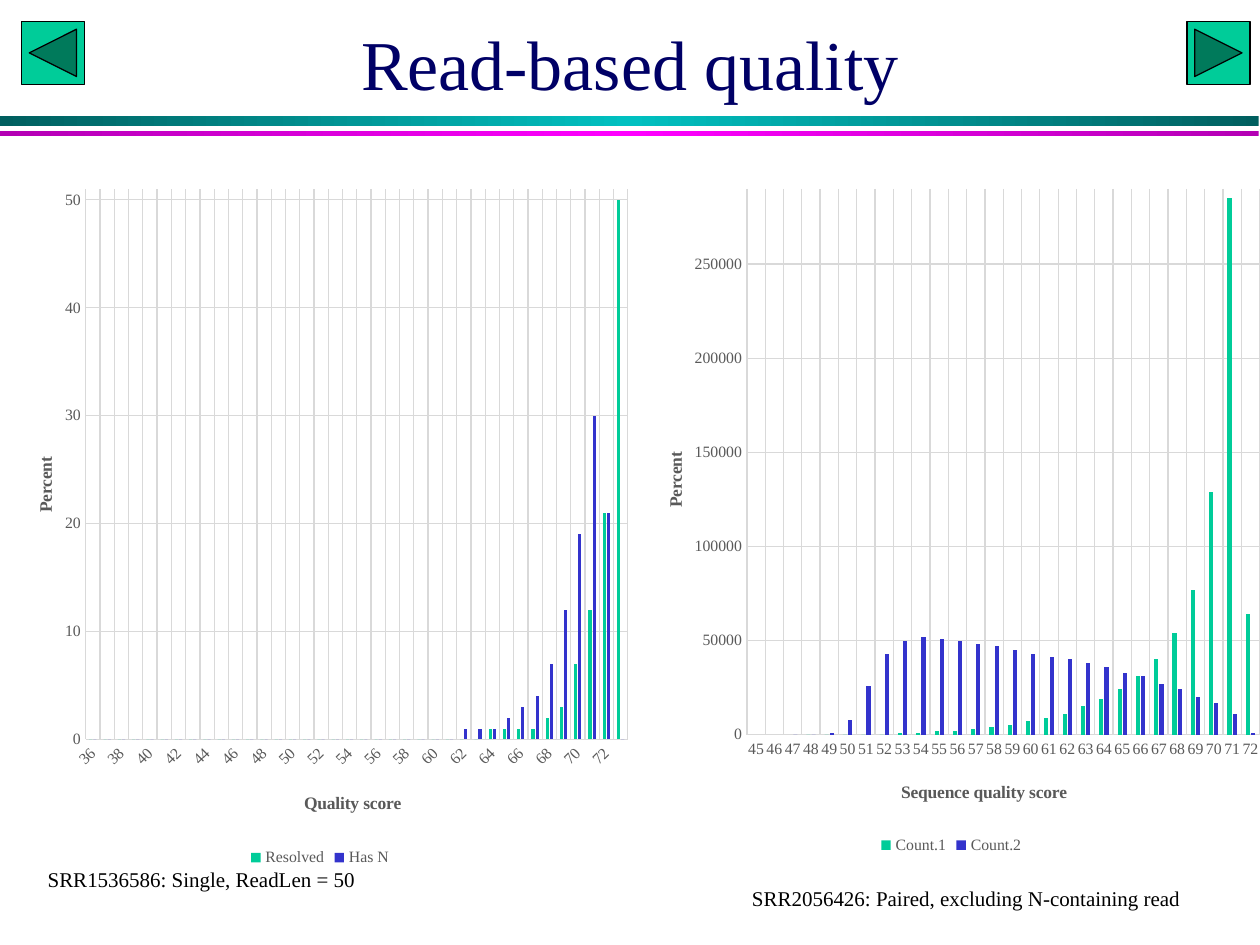
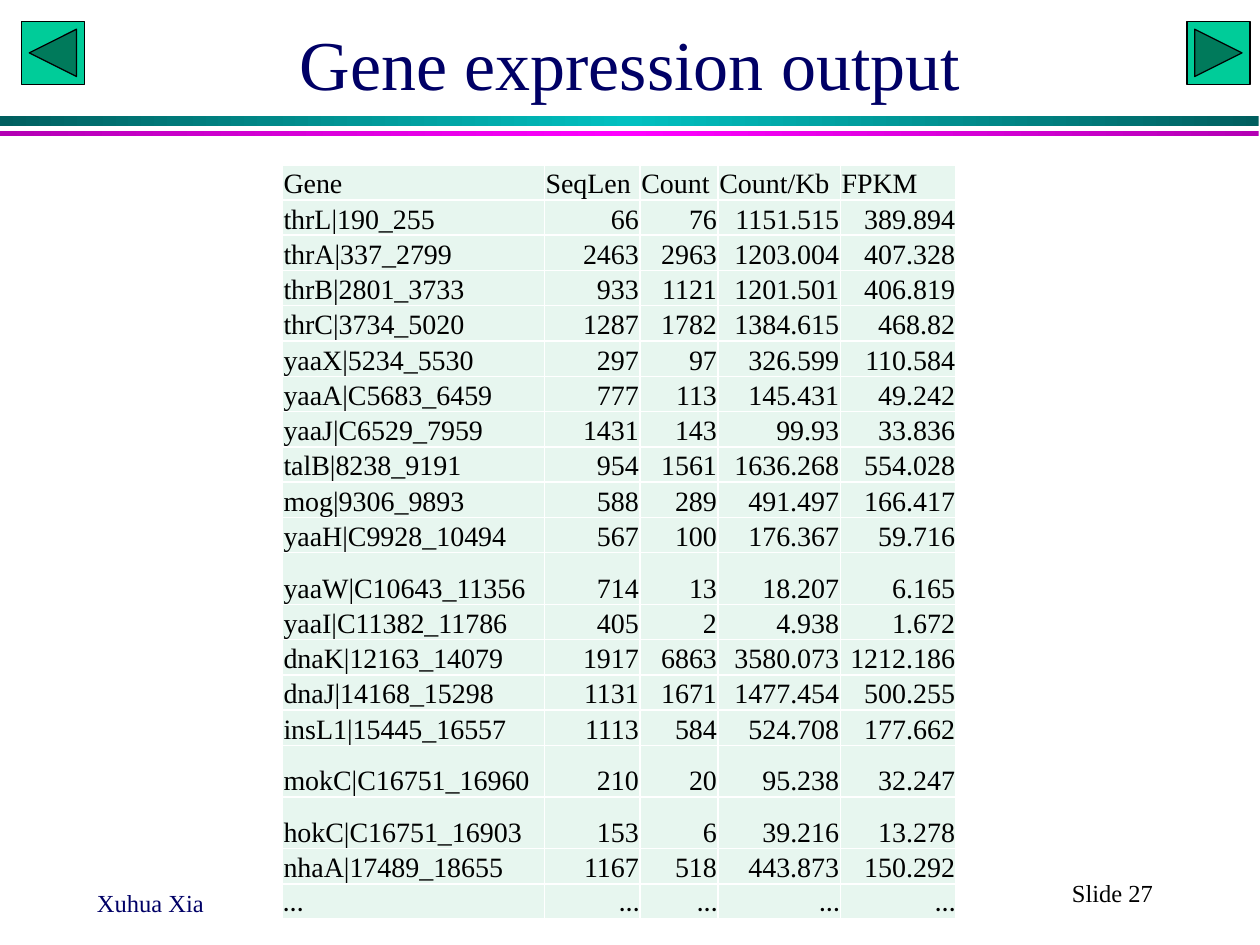
"""Build two slides on read quality and gene expression."""
from copy import deepcopy
from dataclasses import dataclass

from lxml import etree
from pptx import Presentation
from pptx.chart.data import CategoryChartData
from pptx.dml.color import RGBColor
from pptx.enum.chart import XL_CHART_TYPE, XL_LEGEND_POSITION, XL_TICK_MARK
from pptx.enum.shapes import MSO_SHAPE
from pptx.enum.text import MSO_ANCHOR, PP_ALIGN
from pptx.oxml.ns import qn
from pptx.util import Inches, Pt

RECT = MSO_SHAPE.RECTANGLE
BACK = MSO_SHAPE.ACTION_BUTTON_BACK_OR_PREVIOUS
FORWARD = MSO_SHAPE.ACTION_BUTTON_FORWARD_OR_NEXT
COLUMNS = XL_CHART_TYPE.COLUMN_CLUSTERED
LEGEND_BOTTOM = XL_LEGEND_POSITION.BOTTOM
NO_TICK = XL_TICK_MARK.NONE
MIDDLE, BOTTOM = MSO_ANCHOR.MIDDLE, MSO_ANCHOR.BOTTOM
LEFT, CENTER, RIGHT = PP_ALIGN.LEFT, PP_ALIGN.CENTER, PP_ALIGN.RIGHT

NAVY = RGBColor(0x00, 0x00, 0x66)
BLACK = RGBColor(0x00, 0x00, 0x00)
WHITE = RGBColor(0xFF, 0xFF, 0xFF)
GREEN = RGBColor(0x00, 0xCC, 0x99)
BLUE = RGBColor(0x33, 0x33, 0xCC)
GREY = RGBColor(0x59, 0x59, 0x59)
GRID = RGBColor(0xD9, 0xD9, 0xD9)
MINT = RGBColor(0xE7, 0xF6, 0xEF)
TEAL = RGBColor(0x00, 0xC0, 0xC0)
DARK_TEAL = RGBColor(0x00, 0x5F, 0x5F)
MAGENTA = RGBColor(0xFF, 0x00, 0xFF)
DARK_MAGENTA = RGBColor(0xB4, 0x00, 0xB4)

SERIF = "Times New Roman"


@dataclass(frozen=True)
class Band:
    """A full-width stripe below the title."""
    top: float
    height: float
    edge: RGBColor
    centre: RGBColor


@dataclass(frozen=True)
class Label:
    """A line of text in its own box."""
    text: str
    left: float
    top: float
    width: float
    height: float
    size: int = 12
    color: RGBColor = BLACK
    align: PP_ALIGN = LEFT


@dataclass(frozen=True)
class QualityChart:
    """A column chart of reads by quality score."""
    box: tuple[float, float, float, float]
    plot: tuple[float, float, float, float]
    score_title: str
    score_title_at: tuple[float, float]
    first_score: int
    label_angle: int
    top_value: int
    step: int
    series: dict[str, list]


BANDS = (Band(0.92, 0.08, DARK_TEAL, TEAL), Band(1.04, 0.04, DARK_MAGENTA, MAGENTA))
BUTTONS = ((BACK, 0.17), (FORWARD, 9.42))

CHARTS = (
    QualityChart(
        (0, 1.39, 5.08, 5.53), (0.134, 0.02, 0.847, 0.79),
        "Quality score", (0.47, 0.88), 36, -45, 51, 10,
        {"Resolved": [0] * 28 + [1, 1, 1, 1, 2, 3, 7, 12, 21, 50],
         "Has N": [0] * 26 + [1, 1, 1, 2, 3, 4, 7, 12, 19, 30, 21, 0]}),
    QualityChart(
        (5, 1.39, 5.1, 5.43), (0.182, 0.02, 0.798, 0.798),
        "Sequence quality score", (0.417, 0.88), 45, 0, 290000, 50000,
        {"Count.1": [None] * 3 + [0] * 5 + [
            1000, 1000, 2000, 2000, 3000, 4000, 5000, 7000, 9000, 11000,
            15000, 19000, 24000, 31000, 40000, 54000, 77000, 129000,
            285000, 64000],
         "Count.2": [None, None, 0, 0] + [
            1000, 8000, 26000, 43000, 50000, 52000, 51000, 50000, 48000,
            47000, 45000, 43000, 41000, 40000, 38000, 36000, 33000, 31000,
            27000, 24000, 20000, 17000, 11000, 1000]}),
)
CAPTIONS = (
    Label("SRR2056426: Paired, excluding N-containing read", 5.87, 6.98, 3.94, 0.3),
    Label("SRR1536586: Single, ReadLen = 50", 0.28, 6.83, 5, 0.3),
)
FOOTERS = (
    Label("Xuhua Xia", 0.67, 7, 2.08, 0.25, 14, NAVY),
    Label("Slide 27", 7.83, 6.92, 2, 0.33, 14, align=CENTER),
)

GENES = """Gene SeqLen Count Count/Kb FPKM
thrL|190_255 66 76 1151.515 389.894
thrA|337_2799 2463 2963 1203.004 407.328
thrB|2801_3733 933 1121 1201.501 406.819
thrC|3734_5020 1287 1782 1384.615 468.82
yaaX|5234_5530 297 97 326.599 110.584
yaaA|C5683_6459 777 113 145.431 49.242
yaaJ|C6529_7959 1431 143 99.93 33.836
talB|8238_9191 954 1561 1636.268 554.028
mog|9306_9893 588 289 491.497 166.417
yaaH|C9928_10494 567 100 176.367 59.716
yaaW|C10643_11356 714 13 18.207 6.165
yaaI|C11382_11786 405 2 4.938 1.672
dnaK|12163_14079 1917 6863 3580.073 1212.186
dnaJ|14168_15298 1131 1671 1477.454 500.255
insL1|15445_16557 1113 584 524.708 177.662
mokC|C16751_16960 210 20 95.238 32.247
hokC|C16751_16903 153 6 39.216 13.278
nhaA|17489_18655 1167 518 443.873 150.292
… … … … …"""
GENE_COLUMNS = (2.08, 0.76, 0.62, 0.97, 0.92)
ROW_HEIGHT = 0.28
ODD_ROW_HEIGHTS = {0: 0.15, 11: 0.41, 16: 0.41, 17: 0.41}


def style_font(font, size: int, color: RGBColor, name: str = SERIF) -> None:
    """Set typeface, size and colour."""
    font.name, font.size = name, Pt(size)
    font.color.rgb = color


def add_band(s, band: Band) -> None:
    """Draw a stripe that is brightest in the middle."""
    sp = s.shapes.add_shape(RECT, 0, Inches(band.top), Inches(9.99), Inches(band.height))
    sp.shadow.inherit = False
    sp.line.fill.background()
    sp.fill.gradient()
    sp.fill.gradient_angle = 0
    start, middle = sp.fill.gradient_stops
    start.color.rgb, middle.color.rgb = band.edge, band.centre
    start.position, middle.position = 0, 0.5
    stops = sp._element.spPr.find(qn("a:gradFill")).find(qn("a:gsLst"))
    end = deepcopy(stops[0])
    end.set("pos", "100000")
    stops.append(end)


def add_button(s, kind: MSO_SHAPE, left: float) -> None:
    """Draw a navigation button."""
    sp = s.shapes.add_shape(kind, Inches(left), Inches(0.17), Inches(0.5), Inches(0.5))
    sp.shadow.inherit = False
    sp.fill.solid()
    sp.fill.fore_color.rgb = GREEN
    sp.line.color.rgb = BLACK
    sp.line.width = Pt(0.75)


def add_titled_slide(prs, title: str):
    """Add a slide with bands, buttons and title."""
    s = prs.slides.add_slide(prs.slide_layouts[5])
    for band in BANDS:
        add_band(s, band)
    for kind, left in BUTTONS:
        add_button(s, kind, left)
    sp = s.shapes.title
    sp.left, sp.top, sp.width, sp.height = map(Inches, (0.75, 0, 8.5, 1))
    tf = sp.text_frame
    tf.text = title
    tf.vertical_anchor = MIDDLE
    p = tf.paragraphs[0]
    p.alignment = CENTER
    style_font(p.runs[0].font, 40, NAVY)
    return s


def add_label(s, label: Label) -> None:
    """Add a text box."""
    box = map(Inches, (label.left, label.top, label.width, label.height))
    tf = s.shapes.add_textbox(*box).text_frame
    tf.word_wrap = True
    tf.text = label.text
    p = tf.paragraphs[0]
    p.alignment = label.align
    style_font(p.runs[0].font, label.size, label.color)


def set_layout(parent, index: int, inner: bool, *fractions: float) -> None:
    """Place a chart part at fractions of the chart's size."""
    old = parent.find(qn("c:layout"))
    if old is not None:
        parent.remove(old)
    layout = etree.Element(qn("c:layout"))
    manual = etree.SubElement(layout, qn("c:manualLayout"))
    values = {"layoutTarget": "inner"} if inner else {}
    values |= {"xMode": "edge", "yMode": "edge"}
    values |= {key: str(value) for key, value in zip("xywh", fractions)}
    for key, value in values.items():
        etree.SubElement(manual, qn(f"c:{key}")).set("val", value)
    parent.insert(index, layout)


def style_axis(axis, title: str, at: tuple[float, float], title_angle: int, label_angle: int) -> None:
    """Format gridlines, labels and title of an axis."""
    axis.major_tick_mark = axis.minor_tick_mark = NO_TICK
    axis.has_major_gridlines = True
    axis.major_gridlines.format.line.color.rgb = GRID
    axis.major_gridlines.format.line.width = Pt(0.75)
    style_font(axis.tick_labels.font, 9, GREY)
    body = axis._element.find(qn("c:txPr")).find(qn("a:bodyPr"))
    body.set("rot", str(label_angle * 60000))
    tf = axis.axis_title.text_frame
    tf.text = title
    style_font(tf.paragraphs[0].runs[0].font, 10, GREY)
    element = axis.axis_title._element
    element.find(".//" + qn("a:bodyPr")).set("rot", str(title_angle * 60000))
    set_layout(element, 1, False, *at)


def add_quality_chart(s, spec: QualityChart) -> None:
    """Add a clustered column chart."""
    data = CategoryChartData()
    count = max(map(len, spec.series.values()))
    data.categories = [str(spec.first_score + i) for i in range(count)]
    for name, values in spec.series.items():
        data.add_series(name, values)
    chart = s.shapes.add_chart(COLUMNS, *map(Inches, spec.box), data).chart
    style_font(chart.font, 10, BLACK)
    chart.has_title = False
    chart.has_legend = True
    chart.legend.position = LEGEND_BOTTOM
    chart.legend.include_in_layout = False
    style_font(chart.legend.font, 9, GREY)
    plot = chart.plots[0]
    plot.vary_by_categories = False
    plot.gap_width, plot.overlap = 219, -27
    for series, color in zip(plot.series, (GREEN, BLUE)):
        series.format.fill.solid()
        series.format.fill.fore_color.rgb = color
    scores, amounts = chart.category_axis, chart.value_axis
    style_axis(scores, spec.score_title, spec.score_title_at, 0, spec.label_angle)
    style_axis(amounts, "Percent", (0.048, 0.4), -90, 0)
    scores.format.line.color.rgb = GRID
    scores.format.line.width = Pt(0.75)
    amounts.format.line.fill.background()
    amounts.minimum_scale, amounts.maximum_scale = 0, spec.top_value
    amounts.major_unit = spec.step
    set_layout(chart._chartSpace.find(".//" + qn("c:plotArea")), 0, True, *spec.plot)


def fill_cell(cell, text: str, align: PP_ALIGN, font_name: str) -> None:
    """Write a table cell with white borders."""
    cell.text = text
    cell.vertical_anchor = BOTTOM
    cell.margin_left = cell.margin_right = cell.margin_top = Inches(0.01)
    cell.margin_bottom = 0
    p = cell.text_frame.paragraphs[0]
    p.alignment = align
    style_font(p.runs[0].font, 16, BLACK, font_name)
    properties = cell._tc.get_or_add_tcPr()
    for side in "LRTB":
        line = etree.SubElement(properties, qn(f"a:ln{side}"), w=str(Pt(1)))
        solid = etree.SubElement(line, qn("a:solidFill"))
        etree.SubElement(solid, qn("a:srgbClr"), val=str(WHITE))
    cell.fill.solid()
    cell.fill.fore_color.rgb = MINT


def add_gene_table(s) -> None:
    """Add the table of gene expression."""
    rows = [line.split() for line in GENES.splitlines()]
    box = map(Inches, (2.24, 1.31, 5.35, 5.98))
    table = s.shapes.add_table(len(rows), len(GENE_COLUMNS), *box).table
    table.first_row = table.horz_banding = False
    for column, width in zip(table.columns, GENE_COLUMNS):
        column.width = Inches(width)
    for i, row in enumerate(rows):
        table.rows[i].height = Inches(ODD_ROW_HEIGHTS.get(i, ROW_HEIGHT))
        font_name = "Calibri" if row[0] == "…" else SERIF
        for j, text in enumerate(row):
            fill_cell(table.cell(i, j), text, RIGHT if i and j else LEFT, font_name)


def main() -> None:
    """Build and save the presentation."""
    prs = Presentation()
    prs.slide_width, prs.slide_height = Inches(10), Inches(7.5)
    s = add_titled_slide(prs, "Read-based quality")
    for spec in CHARTS:
        add_quality_chart(s, spec)
    for caption in CAPTIONS:
        add_label(s, caption)
    s = add_titled_slide(prs, "Gene expression output")
    for footer in FOOTERS:
        add_label(s, footer)
    add_gene_table(s)
    prs.save("out.pptx")


if __name__ == "__main__":
    main()
